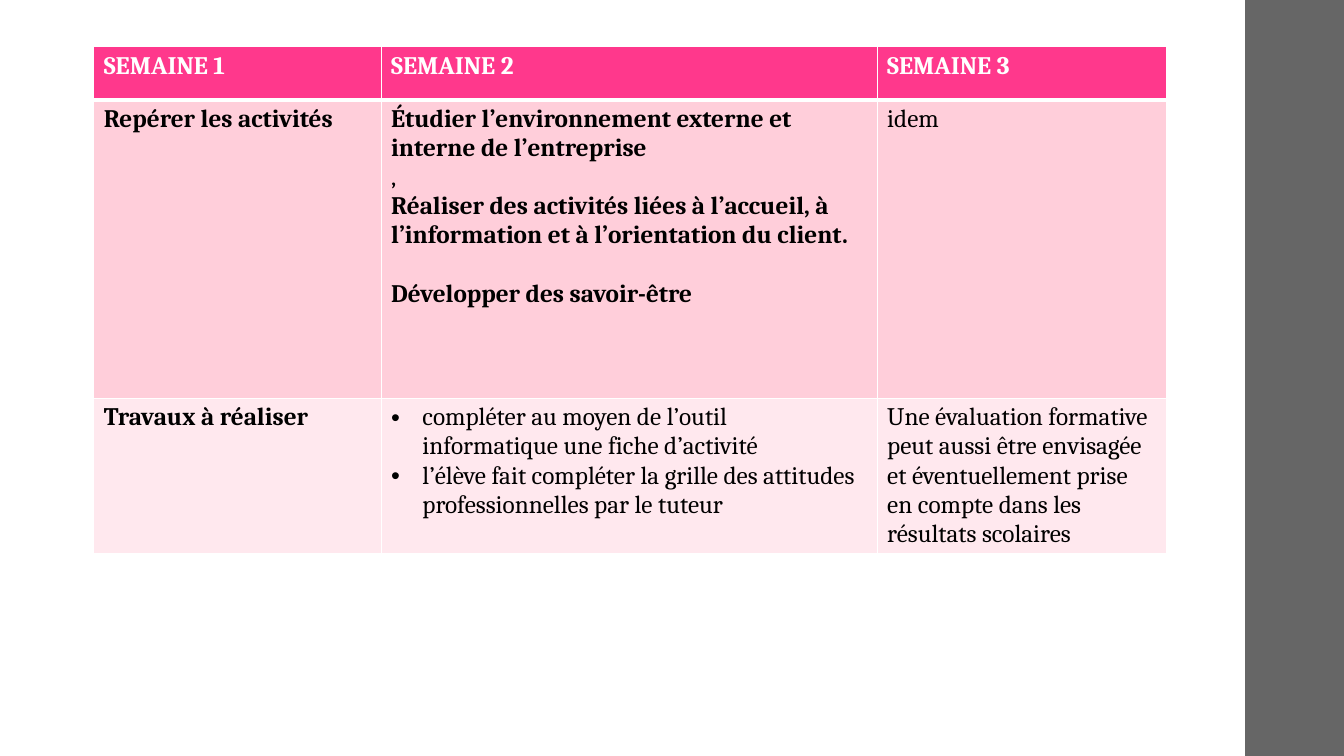
from lxml import etree
from pptx import Presentation
from pptx.dml.color import RGBColor
from pptx.enum.shapes import MSO_SHAPE
from pptx.oxml.ns import qn
from pptx.util import Inches, Pt

RECT = MSO_SHAPE.RECTANGLE
FONT = "Cambria"
WHITE, BLACK, GREY = "FFFFFF", "000000", "666666"
FILLS = ["FF388C", "FFCEDA", "FFE8EE"]
COLS = [2.85, 4.92, 2.87]
ROWS = [0.53, 2.96, 1.54]

# Each cell lists its paragraphs: text, bold, bullet, points before
CELLS = [
    [[(f"SEMAINE {week}", True, False, 0)] for week in (1, 2, 3)],
    [
        [("Repérer les activités", True, False, 0)],
        [
            ("Étudier l’environnement externe et interne de l’entreprise",
             True, False, 0),
            (",", False, False, 0),
            ("Réaliser des activités liées à l’accueil, à l’information "
             "et à l’orientation du client.", True, False, 0),
            ("Développer des savoir-être", True, False, 21),
        ],
        [("idem", False, False, 0)],
    ],
    [
        [("Travaux à réaliser", True, False, 0)],
        [
            ("compléter au moyen de l’outil informatique une fiche d’activité",
             False, True, 0),
            ("l’élève fait compléter la grille des attitudes "
             "professionnelles par le tuteur", False, True, 0),
        ],
        [("Une évaluation formative peut aussi être envisagée et "
          "éventuellement prise en compte dans les résultats scolaires",
          False, False, 0)],
    ],
]


def paint(item, color):
    item.solid()
    item.fore_color.rgb = RGBColor.from_string(color)


def add_band(slide):
    band = slide.shapes.add_shape(
        RECT, Inches(12.35), 0, Inches(0.98), Inches(7.5))
    band.shadow.inherit = False
    paint(band.fill, GREY)
    band.line.fill.background()


def add_edge(cell, side, width):
    props = cell._tc.get_or_add_tcPr()
    line = etree.SubElement(props, qn(f"a:ln{side}"), w=str(Pt(width)))
    fill = etree.SubElement(line, qn("a:solidFill"))
    etree.SubElement(fill, qn("a:srgbClr"), val=WHITE)


def add_bullet(para):
    props = para._p.get_or_add_pPr()
    props.set("marL", str(Inches(0.31)))
    props.set("indent", str(Inches(-0.31)))
    etree.SubElement(props, qn("a:buFont"), typeface="Arial")
    etree.SubElement(props, qn("a:buChar"), char="•")


def write(cell, paras, color):
    frame = cell.text_frame
    for i, (text, bold, bullet, before) in enumerate(paras):
        para = frame.add_paragraph() if i else frame.paragraphs[0]
        if before:
            para.space_before = Pt(before)
        if bullet:
            add_bullet(para)
        run = para.add_run()
        run.text = text
        run.font.name = FONT
        run.font.size = Pt(18)
        run.font.bold = bold
        run.font.color.rgb = RGBColor.from_string(color)


def add_grid(slide):
    table = slide.shapes.add_table(
        len(ROWS), len(COLS), Inches(0.93), Inches(0.46),
        Inches(sum(COLS)), Inches(sum(ROWS))).table
    for col, width in zip(table.columns, COLS):
        col.width = Inches(width)
    for r, height in enumerate(ROWS):
        table.rows[r].height = Inches(height)
        for c, paras in enumerate(CELLS[r]):
            cell = table.cell(r, c)
            # The rule under the header row is thicker
            thick = {(0, "B"), (1, "T")}
            for side in "LRTB":
                add_edge(cell, side, 3 if (r, side) in thick else 1)
            paint(cell.fill, FILLS[r])
            write(cell, paras, BLACK if r else WHITE)


def main():
    deck = Presentation()
    deck.slide_width = Inches(13.33)
    deck.slide_height = Inches(7.5)
    slide = deck.slides.add_slide(deck.slide_layouts[6])
    # Side band, then the weekly table
    add_band(slide)
    add_grid(slide)
    deck.save("out.pptx")


if __name__ == "__main__":
    main()
